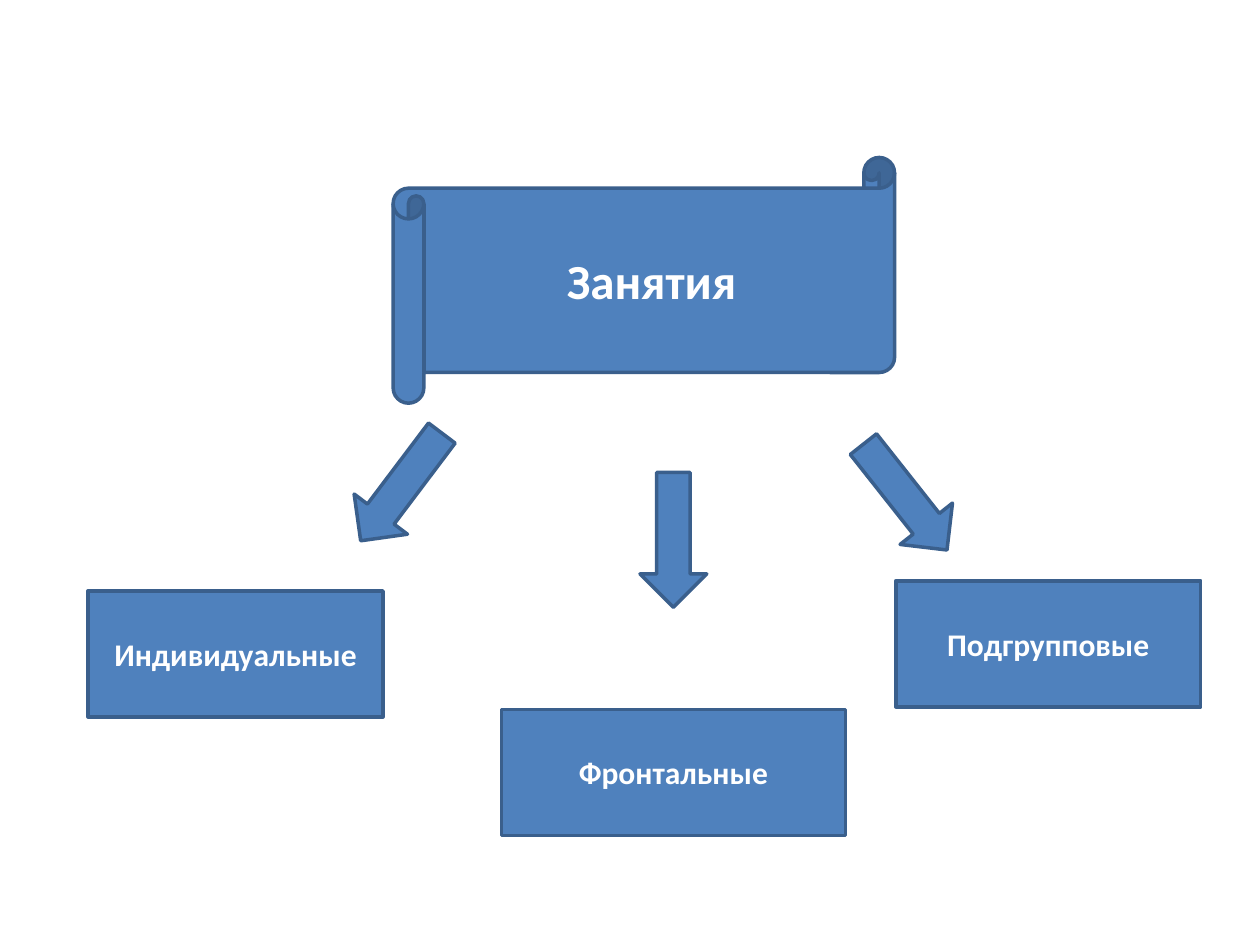
from dataclasses import dataclass

from pptx import Presentation
from pptx import util as u
from pptx.dml.color import RGBColor
from pptx.enum import shapes, text

# Grid of the slide: 10 columns by 7.5 rows, one inch each
CELL = u.Inches(1)
COLS, ROWS = 10, 7.5
ARROW_W, ARROW_H = 0.53, 1.07
BOX_H = 1


@dataclass(frozen=True)
class Theme:
    font: str = "Calibri"
    fill: RGBColor = RGBColor(0x4F, 0x81, 0xBD)
    line: RGBColor = RGBColor(0x3A, 0x5F, 0x8C)
    ink: RGBColor = RGBColor(0xFF, 0xFF, 0xFF)
    line_w: int = 2
    heading: int = 28
    label: int = 18


THEME = Theme()
KIND = shapes.MSO_SHAPE


def grid(cells):
    return u.Emu(round(cells * CELL))


def add_figure(s, kind, col, row, width, height):
    """Place a preset shape in the theme's fill and outline."""
    sp = s.shapes.add_shape(kind, *map(grid, (col, row, width, height)))
    sp.shadow.inherit = False
    sp.fill.solid()
    sp.fill.fore_color.rgb = THEME.fill
    sp.line.color.rgb = THEME.line
    sp.line.width = u.Pt(THEME.line_w)
    return sp


def add_label(sp, words, size):
    """Write bold centred text in a shape."""
    tf = sp.text_frame
    tf.word_wrap = True
    tf.vertical_anchor = text.MSO_ANCHOR.MIDDLE
    p = tf.paragraphs[0]
    p.text = words
    p.alignment = text.PP_ALIGN.CENTER
    font = p.runs[0].font
    font.name, font.size, font.bold = THEME.font, u.Pt(size), True
    font.color.rgb = THEME.ink


def add_heading(s, words, col, row, width, height):
    sp = add_figure(s, KIND.HORIZONTAL_SCROLL, col, row, width, height)
    add_label(sp, words, THEME.heading)


def add_box(s, words, col, row, width):
    sp = add_figure(s, KIND.RECTANGLE, col, row, width, BOX_H)
    add_label(sp, words, THEME.label)


def add_arrow(s, col, row, angle):
    sp = add_figure(s, KIND.DOWN_ARROW, col, row, ARROW_W, ARROW_H)
    sp.rotation = angle


def main():
    prs = Presentation()
    prs.slide_width, prs.slide_height = grid(COLS), grid(ROWS)
    s = prs.slides.add_slide(prs.slide_layouts[6])

    # Topic
    add_heading(s, "Занятия", 3.12, 1.25, 3.98, 1.95)

    # Arrows from the topic to its kinds: column, row, angle
    for arrow in ((2.92, 3.33, 37), (5.08, 3.75, 0), (6.92, 3.41, 321.7)):
        add_arrow(s, *arrow)

    # Kinds of lesson: label, column, row, width
    for box in (
        ("Индивидуальные", 0.7, 4.69, 2.34),
        ("Фронтальные", 3.98, 5.63, 2.73),
        ("Подгрупповые", 7.11, 4.61, 2.42),
    ):
        add_box(s, *box)

    prs.save("out.pptx")


if __name__ == "__main__":
    main()
